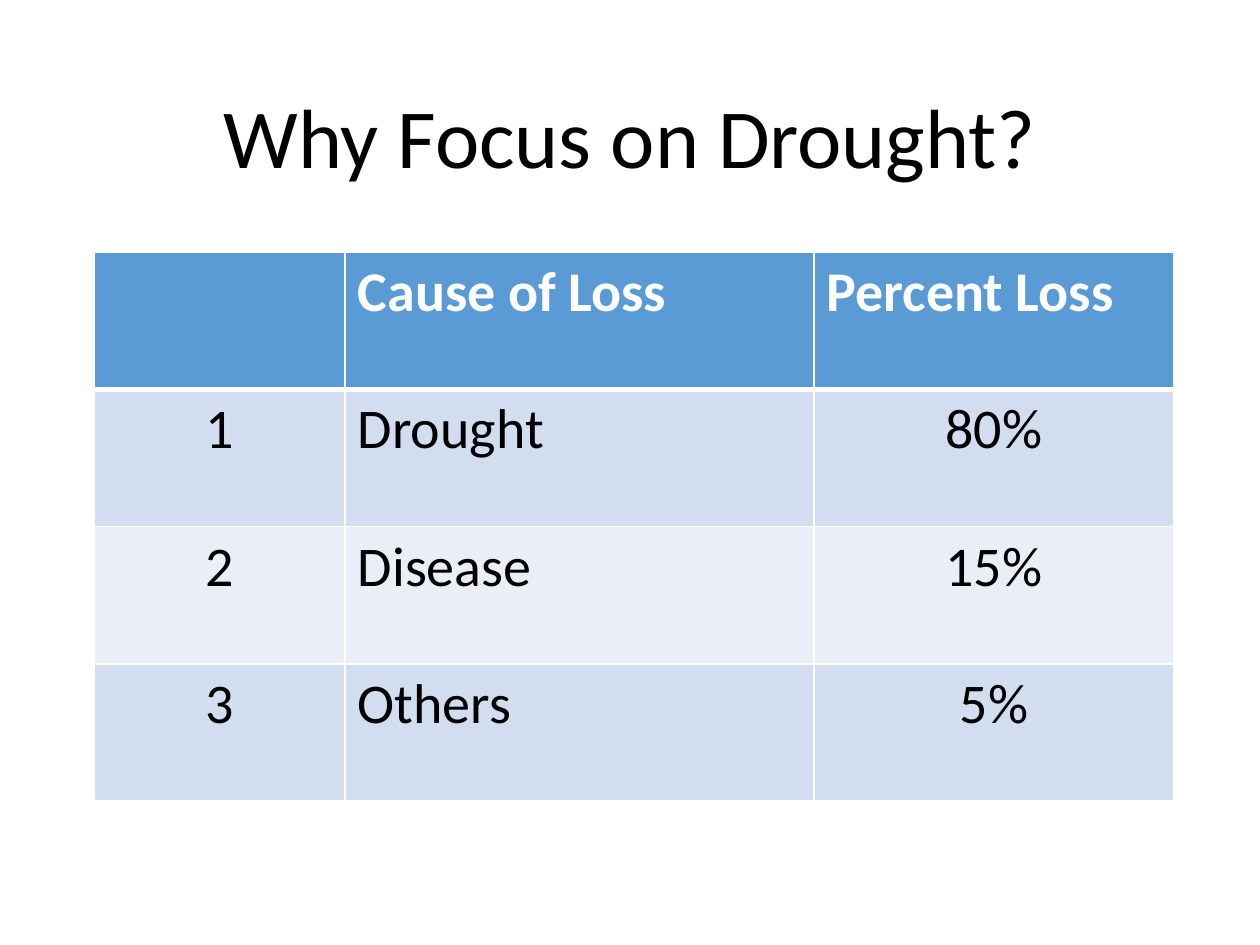
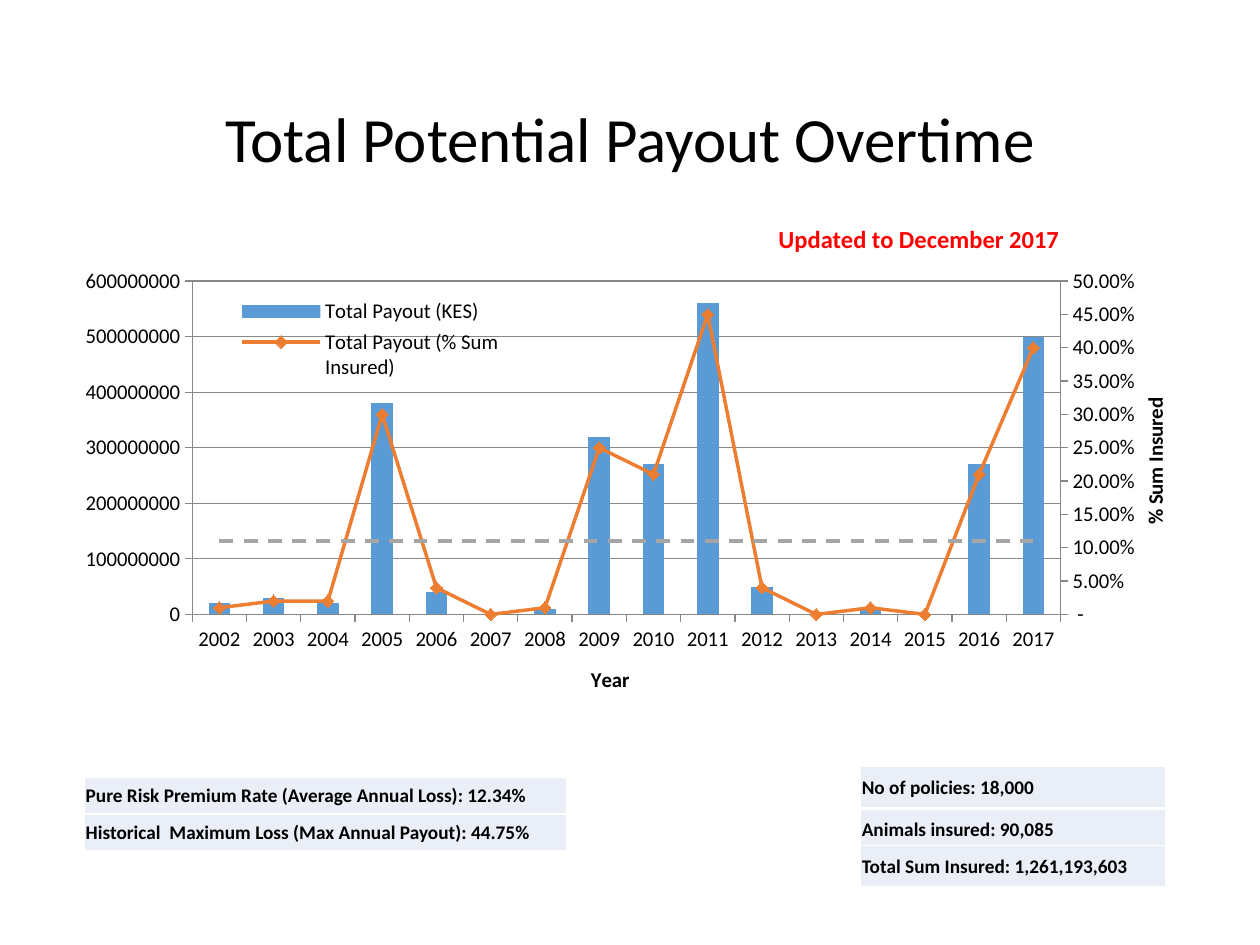
from copy import deepcopy

from pptx import Presentation
from pptx.chart.axis import ValueAxis
from pptx.chart.data import CategoryChartData
from pptx.dml.color import RGBColor
from pptx.enum.chart import XL_CHART_TYPE, XL_LEGEND_POSITION, XL_MARKER_STYLE, XL_TICK_MARK
from pptx.enum.dml import MSO_LINE
from pptx.enum.text import MSO_ANCHOR, MSO_AUTO_SIZE, PP_ALIGN
from pptx.oxml import parse_xml
from pptx.oxml.ns import nsdecls, qn
from pptx.util import Inches, Pt

FONT = "Calibri"
COLORS = {
    "white": "FFFFFF",
    "black": "000000",
    "blue": "5B9BD5",
    "band": "D2DEEF",
    "pale": "EAEFF7",
    "red": "FF0000",
    "orange": "ED7D31",
    "gray": "A5A5A5",
    "axis": "868686",
}
TITLE_BOX = (0.69, 0.4, 8.62, 1.45)

LOSS_ROWS = [
    ("", "Cause of Loss", "Percent Loss"),
    ("1", "Drought", "80%"),
    ("2", "Disease", "15%"),
    ("3", "Others", "5%"),
]
YEARS = [str(year) for year in range(2002, 2018)]
PAYOUT_MILLIONS = [20, 30, 20, 380, 40, 0, 10, 320, 270, 560, 50, 0, 10, 0, 270, 500]
PAYOUT_SHARES = [0.01, 0.02, 0.02, 0.3, 0.04, 0, 0.01, 0.25,
                 0.21, 0.45, 0.04, 0, 0.01, 0, 0.21, 0.4]
AVERAGE_LOSS = 0.11
LOSS_FACTS = [
    "Pure Risk Premium Rate (Average Annual Loss): 12.34%",
    "Historical  Maximum Loss (Max Annual Payout): 44.75%",
]
POLICY_FACTS = [
    (6.08, "No of policies: 18,000"),
    (6.42, "Animals insured: 90,085"),
    (6.71, "Total Sum Insured: 1,261,193,603"),
]


def color(name):
    return RGBColor.from_string(COLORS[name])


def inches(box):
    return [Inches(length) for length in box]


def set_font(font, size, name="black", bold=False):
    font.name = FONT
    font.size = Pt(size)
    font.bold = bold
    font.color.rgb = color(name)


def add_titled_page(deck, title, size):
    page = deck.slides.add_slide(deck.slide_layouts[5])
    holder = page.shapes.title
    holder.left, holder.top, holder.width, holder.height = inches(TITLE_BOX)
    frame = holder.text_frame
    frame.text = title
    frame.auto_size = MSO_AUTO_SIZE.NONE
    frame.vertical_anchor = MSO_ANCHOR.MIDDLE
    para = frame.paragraphs[0]
    para.alignment = PP_ALIGN.CENTER
    para.line_spacing = 0.9
    set_font(para.font, size)
    return page


def style_cell(cell, text, fill, size, text_color="black", bold=False, top=1, bottom=1):
    cell.text = text
    set_font(cell.text_frame.paragraphs[0].font, size, text_color, bold)
    cell.fill.solid()
    cell.fill.fore_color.rgb = color(fill)
    properties = cell._tc.get_or_add_tcPr()
    widths = {"lnL": 1, "lnR": 1, "lnT": top, "lnB": bottom}
    for position, (edge, width) in enumerate(widths.items()):
        properties.insert(position, parse_xml(
            f'<a:{edge} {nsdecls("a")} w="{Pt(width)}"><a:solidFill>'
            f'<a:srgbClr val="{COLORS["white"]}"/></a:solidFill></a:{edge}>'))


def add_loss_table(page, box):
    table = page.shapes.add_table(len(LOSS_ROWS), 3, *inches(box)).table
    for column, width in zip(table.columns, (1.99, 3.72, 2.86)):
        column.width = Inches(width)
    for row, texts in enumerate(LOSS_ROWS):
        header = row == 0
        fill = "blue" if header else ("pale", "band")[row % 2]
        for column, text in enumerate(texts):
            cell = table.cell(row, column)
            style_cell(cell, text, fill, 32, "white" if header else "black", header,
                       top=3 if row == 1 else 1, bottom=3 if header else 1)
            if not header and column != 1:
                cell.text_frame.paragraphs[0].alignment = PP_ALIGN.CENTER


def add_fact_table(page, box, facts):
    table = page.shapes.add_table(len(facts), 1, *inches(box)).table
    table.first_row = False
    for row, fact in enumerate(facts):
        cell = table.cell(row, 0)
        style_cell(cell, fact, "pale", 11, bold=True)
        cell.vertical_anchor = MSO_ANCHOR.MIDDLE
        cell.margin_left = cell.margin_right = cell.margin_top = Inches(0.01)
        cell.margin_bottom = 0


def add_update_note(page, box):
    frame = page.shapes.add_textbox(*inches(box)).text_frame
    frame.word_wrap = True
    frame.auto_size = MSO_AUTO_SIZE.SHAPE_TO_FIT_TEXT
    frame.text = "Updated to December 2017"
    set_font(frame.paragraphs[0].font, 14, "red", True)


def manual_layout(x, y, width, height, target=""):
    modes = "".join(f'<c:{axis}Mode val="edge"/>' for axis in "xy")
    return parse_xml(
        f'<c:layout {nsdecls("c")}><c:manualLayout>{target}{modes}'
        f'<c:x val="{x}"/><c:y val="{y}"/><c:w val="{width}"/><c:h val="{height}"/>'
        '</c:manualLayout></c:layout>')


def remove_layouts(element):
    for layout in element.findall(qn("c:layout")):
        element.remove(layout)


def move_lines_to_right_axis(plot_area):
    bars = plot_area.find(qn("c:barChart"))
    lines = parse_xml(
        f'<c:lineChart {nsdecls("c")}><c:grouping val="standard"/><c:varyColors val="0"/>'
        '<c:marker val="1"/><c:axId val="5001"/><c:axId val="5002"/></c:lineChart>')
    for series in bars.findall(qn("c:ser"))[1:]:
        for flag in series.findall(qn("c:invertIfNegative")):
            series.remove(flag)
        lines.find(qn("c:marker")).addprevious(series)
    bars.addnext(lines)

    categories = deepcopy(plot_area.find(qn("c:catAx")))
    values = deepcopy(plot_area.find(qn("c:valAx")))
    for axis, own, other in ((categories, "5001", "5002"), (values, "5002", "5001")):
        axis.find(qn("c:axId")).set("val", own)
        axis.find(qn("c:crossAx")).set("val", other)
    categories.find(qn("c:delete")).set("val", "1")
    values.find(qn("c:axPos")).set("val", "r")
    values.find(qn("c:crosses")).set("val", "max")
    last_axis = plot_area.findall(qn("c:valAx"))[-1]
    last_axis.addnext(values)
    values.addnext(categories)
    return ValueAxis(values)


def style_axis(axis, title):
    axis.has_major_gridlines = False
    axis.major_tick_mark = XL_TICK_MARK.OUTSIDE
    axis.minor_tick_mark = XL_TICK_MARK.NONE
    axis.format.line.color.rgb = color("axis")
    set_font(axis.tick_labels.font, 12)
    frame = axis.axis_title.text_frame
    frame.text = title
    set_font(frame.paragraphs[0].font, 12, bold=True)


def style_value_axis(axis, title, maximum, step, number_format):
    style_axis(axis, title)
    axis.minimum_scale, axis.maximum_scale, axis.major_unit = 0, maximum, step
    axis.tick_labels.number_format = number_format
    axis.tick_labels.number_format_is_linked = False
    rotated = axis.axis_title._element.find(".//" + qn("a:bodyPr"))
    rotated.set("rot", "-5400000")
    rotated.set("vert", "horz")


def style_series(chart):
    bar_plot, line_plot = chart.plots
    bar_plot.gap_width = 150
    bar_plot.vary_by_categories = False
    payout = bar_plot.series[0]
    payout.format.fill.solid()
    payout.format.fill.fore_color.rgb = color("blue")
    share, average = line_plot.series
    for series, name, width in ((share, "orange", 2), (average, "gray", 2)):
        series.smooth = False
        series.format.line.width = Pt(width)
        series.format.line.color.rgb = color(name)
    share.marker.style = XL_MARKER_STYLE.DIAMOND
    share.marker.size = 7
    share.marker.format.fill.solid()
    share.marker.format.fill.fore_color.rgb = color("orange")
    share.marker.format.line.color.rgb = color("orange")
    average.marker.style = XL_MARKER_STYLE.NONE
    average.format.line.dash_style = MSO_LINE.DASH


def style_legend(chart):
    chart.has_legend = True
    legend = chart.legend
    legend.position = XL_LEGEND_POSITION.RIGHT
    legend.include_in_layout = False
    set_font(legend.font, 12)
    element = legend._element
    remove_layouts(element)
    position = element.find(qn("c:legendPos"))
    position.addnext(manual_layout(0.11, 0.11, 0.28, 0.2))
    position.addnext(parse_xml(
        f'<c:legendEntry {nsdecls("c")}><c:idx val="2"/><c:delete val="1"/></c:legendEntry>'))


def add_payout_chart(page, box):
    data = CategoryChartData()
    data.categories = YEARS
    data.add_series("Total Payout (KES)", [amount * 1_000_000 for amount in PAYOUT_MILLIONS])
    data.add_series("Total Payout (% Sum Insured)", PAYOUT_SHARES)
    data.add_series("Average Annual Loss", [AVERAGE_LOSS] * len(YEARS))
    chart = page.shapes.add_chart(XL_CHART_TYPE.COLUMN_CLUSTERED, *inches(box), data).chart
    chart.has_title = False
    set_font(chart.font, 12)

    plot_area = chart._chartSpace.chart.plotArea
    right_axis = move_lines_to_right_axis(plot_area)
    style_axis(chart.category_axis, "Year")
    style_value_axis(chart.value_axis, "Total Payout (KES million)",
                     600_000_000, 100_000_000, "#0,,;")
    style_value_axis(right_axis, "% Sum Insured", 0.5, 0.05, '0.00%;-0.00%;" - "')
    style_series(chart)
    style_legend(chart)

    remove_layouts(plot_area)
    plot_area.insert(0, manual_layout(0.084, 0.083, 0.81, 0.729,
                                      '<c:layoutTarget val="inner"/>'))
    plot_area.append(parse_xml(
        f'<c:spPr {nsdecls("c", "a")}><a:noFill/><a:ln w="9525"><a:solidFill>'
        f'<a:srgbClr val="{COLORS["axis"]}"/></a:solidFill></a:ln></c:spPr>'))


def build_drought_page(deck):
    page = add_titled_page(deck, "Why Focus on Drought?", 48)
    add_loss_table(page, (0.75, 2, 8.57, 4.36))


def build_payout_page(deck):
    page = add_titled_page(deck, "Total Potential Payout Overtime", 36)
    add_fact_table(page, (0.67, 6.17, 3.83, 0.58), LOSS_FACTS)
    for top, fact in POLICY_FACTS:
        add_fact_table(page, (6.83, top, 2.42, 0.33), [fact])
    add_update_note(page, (6.08, 1.73, 2.58, 0.34))
    add_payout_chart(page, (0.68, 1.93, 8.64, 3.63))


def main():
    deck = Presentation()
    deck.slide_width, deck.slide_height = Inches(10), Inches(7.5)
    build_drought_page(deck)
    build_payout_page(deck)
    deck.save("out.pptx")


if __name__ == "__main__":
    main()
